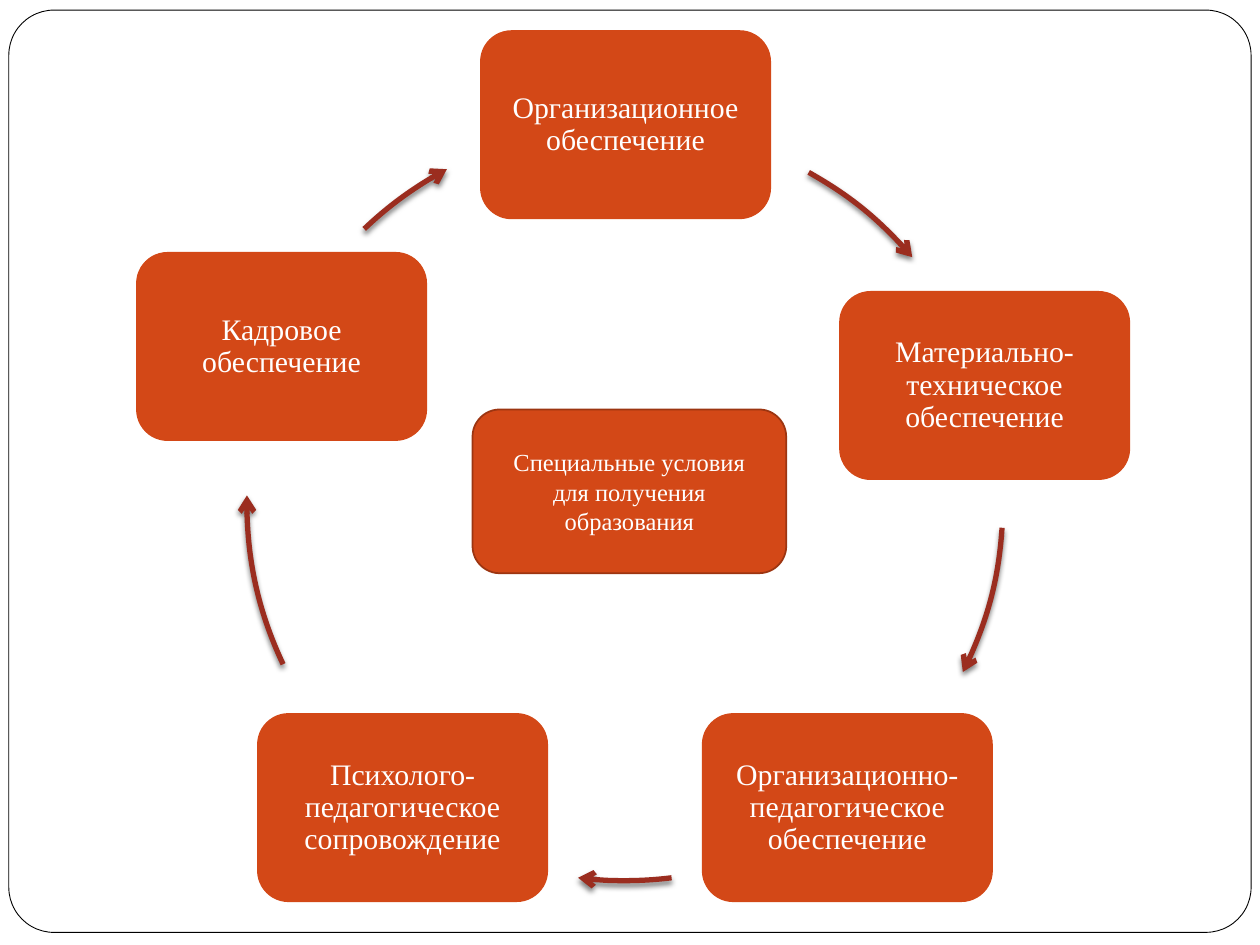
from typing import NamedTuple

from lxml.etree import SubElement
from pptx import Presentation
from pptx.dml.color import RGBColor
from pptx.enum.shapes import MSO_SHAPE as Shape
from pptx.enum.text import MSO_ANCHOR as Anchor, PP_ALIGN as Align
from pptx.oxml.ns import qn
from pptx.util import Inches, Pt

ORANGE, RUST, WHITE = "D34817", "9B2D1F", "FFFFFF"
FONT = "Times New Roman"
BOX_W, BOX_H = 2.31, 1.5
RING_X, RING_Y, RING_D = 1.96, 0.99, 6


class Step(NamedTuple):
    """A box of the cycle and the arc that leaves it, in clockwise degrees."""
    text: str
    left: float
    top: float
    start: float
    end: float


STEPS = [
    Step("Организационное обеспечение", 3.81, 0.24, 299.1, 319.5),
    Step("Материально-техническое обеспечение", 6.66, 2.31, 3.8, 26.6),
    Step("Организационно-педагогическое обеспечение", 5.57, 5.66, 82.9, 97.1),
    Step("Психолого-педагогическое сопровождение", 2.04, 5.66, 154.7, 181.1),
    Step("Кадровое обеспечение", 1.08, 2, 226.4, 241.9),
]


def color(code: str) -> RGBColor:
    return RGBColor.from_string(code)


def add_box(slide, left: float, top: float, width: float, height: float,
            fill: str, line: str = "", weight: float = 1):
    box = slide.shapes.add_shape(Shape.ROUNDED_RECTANGLE, Inches(left),
                                 Inches(top), Inches(width), Inches(height))
    box.shadow.inherit = False
    box.fill.solid()
    box.fill.fore_color.rgb = color(fill)
    if line:
        box.line.color.rgb = color(line)
        box.line.width = Pt(weight)
    else:
        box.line.fill.background()
    return box


def add_label(box, text: str, size: float):
    frame = box.text_frame
    frame.word_wrap = True
    frame.vertical_anchor = Anchor.MIDDLE
    para = frame.paragraphs[0]
    para.text = text
    para.alignment = Align.CENTER
    para.font.name = FONT
    para.font.size = Pt(size)
    para.font.color.rgb = color(WHITE)
    return para


def add_step(slide, step: Step) -> None:
    box = add_box(slide, step.left, step.top, BOX_W, BOX_H, ORANGE)
    add_label(box, step.text, 17).line_spacing = 0.9
    frame = box.text_frame
    frame.margin_left = frame.margin_right = Inches(0.07)
    frame.margin_top = frame.margin_bottom = Inches(0.07)


def add_arc(slide, step: Step) -> None:
    arc = slide.shapes.add_shape(Shape.ARC, Inches(RING_X), Inches(RING_Y),
                                 Inches(RING_D), Inches(RING_D))
    # Angles are stored in 1/60000 degree, adjustments in 1/100000
    arc.adjustments[0] = step.start * 0.6
    arc.adjustments[1] = step.end * 0.6
    arc.fill.background()
    arc.line.color.rgb = color(RUST)
    arc.line.width = Pt(3)
    SubElement(arc.line._get_or_add_ln(), qn("a:tailEnd"), type="arrow")
    add_shadow(arc)


def add_shadow(shape) -> None:
    shape.shadow.inherit = False
    effects = shape._element.spPr.find(qn("a:effectLst"))
    shadow = SubElement(effects, qn("a:outerShdw"), blurRad=str(Pt(3)),
                        dist=str(Pt(2)), dir="5400000", rotWithShape="0")
    black = SubElement(shadow, qn("a:srgbClr"), val="000000")
    SubElement(black, qn("a:alpha"), val="50000")


def main() -> None:
    deck = Presentation()
    deck.slide_width, deck.slide_height = Inches(10), Inches(7.5)
    slide = deck.slides.add_slide(deck.slide_layouts[6])

    border = add_box(slide, 0.07, 0.08, 9.86, 7.32, WHITE, "000000", 0.5)
    border.adjustments[0] = 0.049

    for step in STEPS:
        add_step(slide, step)
        add_arc(slide, step)

    center = add_box(slide, 3.75, 3.25, 2.49, 1.3, ORANGE, "9C3511")
    add_label(center, "Специальные условия для получения образования", 14)
    deck.save("out.pptx")


if __name__ == "__main__":
    main()
